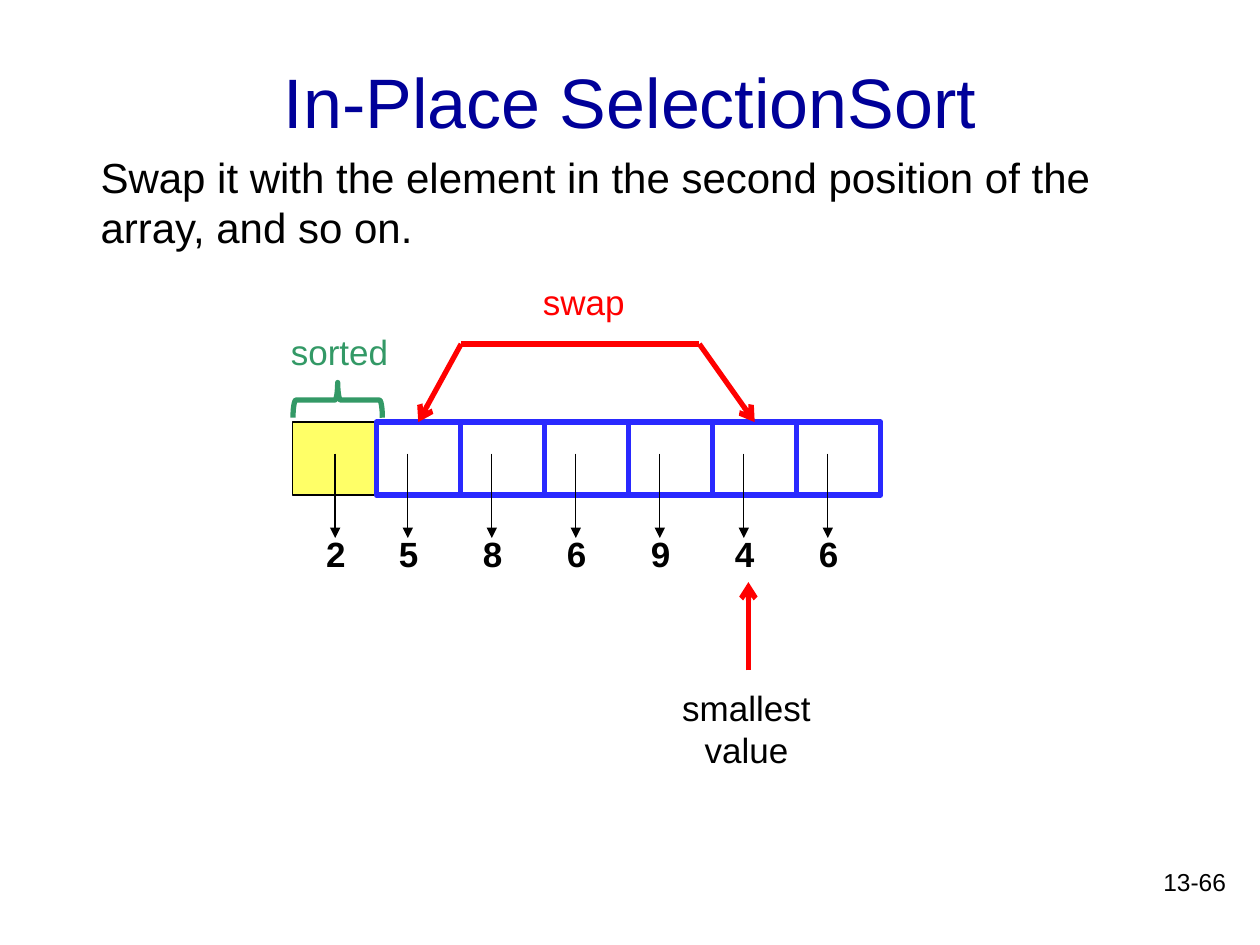
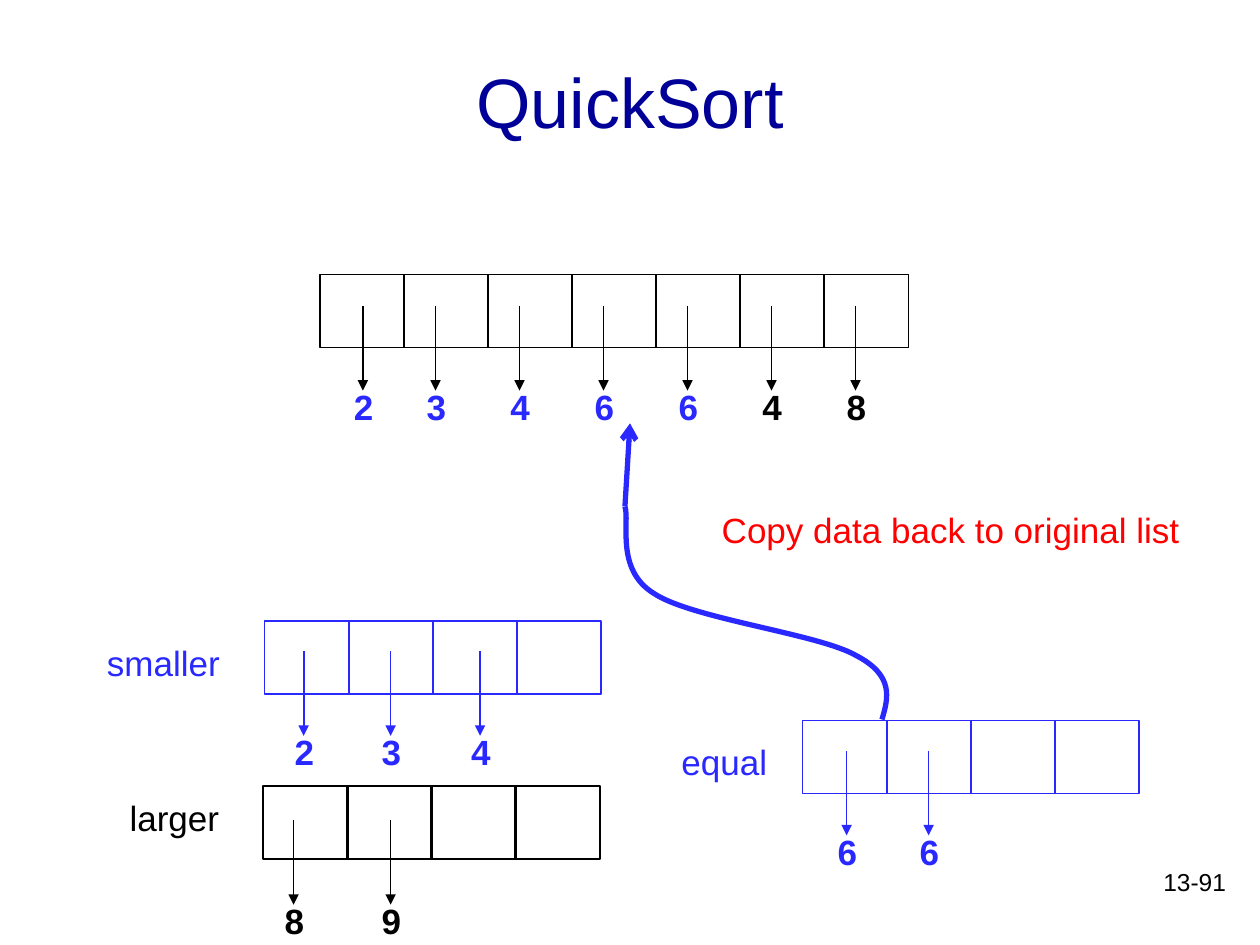
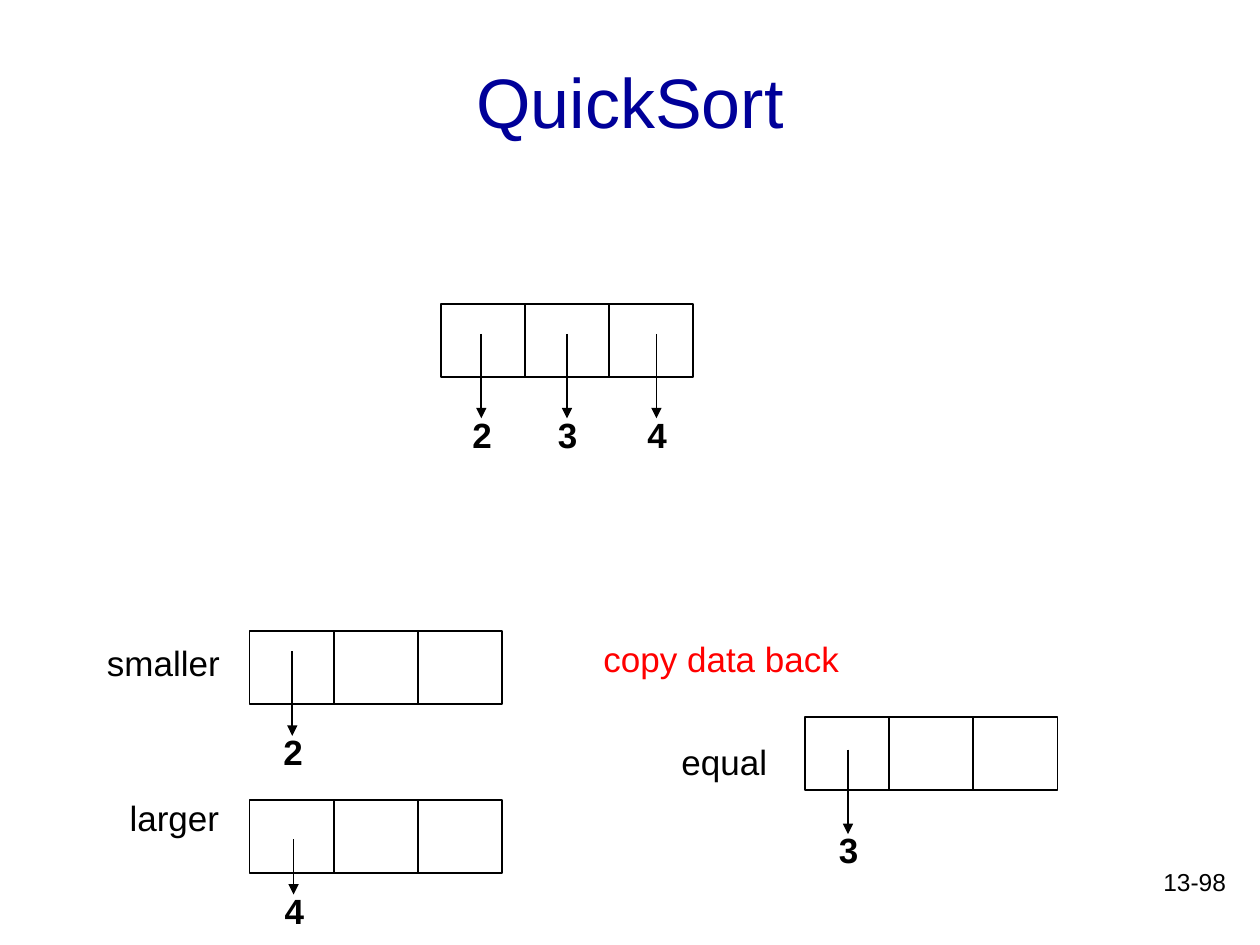
from lxml.etree import SubElement
from pptx import Presentation
from pptx.dml.color import RGBColor
from pptx.enum.shapes import MSO_CONNECTOR, MSO_SHAPE
from pptx.enum.text import MSO_ANCHOR, MSO_AUTO_SIZE, PP_ALIGN
from pptx.oxml.ns import qn
from pptx.util import Inches, Pt

COLORS = {
    "title": "000099",
    "ink": "000000",
    "active": "2929FF",
    "note": "FF0000",
    "sorted": "339966",
    "sorted_cell": "FFFF67",
}
FONT = "Arial"
CELL_PITCH = 2 / 3
CELL_WIDTH, CELL_HEIGHT = 0.67, 0.58
ARROW_LENGTH = 0.67


def rgb(color):
    return RGBColor.from_string(COLORS[color])


def add_text(slide, text, left, top, width, height, size=20, color="ink", bold=False,
             align=PP_ALIGN.LEFT, anchor=MSO_ANCHOR.TOP, wrap=True, before=0):
    box = slide.shapes.add_textbox(Inches(left), Inches(top), Inches(width), Inches(height))
    frame = box.text_frame
    frame.word_wrap = wrap
    frame.auto_size = MSO_AUTO_SIZE.NONE if wrap else MSO_AUTO_SIZE.SHAPE_TO_FIT_TEXT
    frame.vertical_anchor = anchor
    frame.text = text
    for paragraph in frame.paragraphs:
        paragraph.alignment = align
        paragraph.space_before = Pt(before)
        font = paragraph.font
        for run in paragraph.runs:
            font = run.font
            font.name, font.size, font.bold = FONT, Pt(size), bold
            font.color.rgb = rgb(color)


def add_label(slide, text, left, top, width, color="ink", height=0.44, **options):
    add_text(slide, text, left, top, width, height, color=color, wrap=False, **options)


def style_outline(shape, color, weight, fill=None):
    shape.shadow.inherit = False
    shape.line.color.rgb = rgb(color)
    shape.line.width = Pt(weight)
    if fill:
        shape.fill.solid()
        shape.fill.fore_color.rgb = rgb(fill)
    else:
        shape.fill.background()


def add_line(slide, start, end, color="ink", weight=1, head=None):
    line = slide.shapes.add_connector(
        MSO_CONNECTOR.STRAIGHT, *(Inches(value) for value in (*start, *end)))
    line.line.color.rgb = rgb(color)
    line.line.width = Pt(weight)
    if head:
        SubElement(line.line._get_or_add_ln(), qn("a:tailEnd"), type=head)
    SubElement(line._element.spPr, qn("a:effectLst"))


def add_cells(slide, left, top, count, color="ink", weight=1, fill=None):
    for index in range(count):
        cell = slide.shapes.add_shape(
            MSO_SHAPE.RECTANGLE, Inches(left + index * CELL_PITCH), Inches(top),
            Inches(CELL_WIDTH), Inches(CELL_HEIGHT))
        style_outline(cell, color, weight, fill)


def add_pointer(slide, value, x, top, color="ink", arrow_color="ink", weight=1,
                length=ARROW_LENGTH):
    """Arrow out of a cell, down to the value that the cell refers to."""
    end = top + length
    add_text(slide, value, x - 0.17, end - 0.09, 0.42, 0.43, color=color, bold=True, before=3)
    add_line(slide, (x, top), (x, end), arrow_color, weight, "triangle")


def add_full_list_pointers(slide, left, top, values, active_count=0):
    for index, value in enumerate(values):
        offset = 0.25 + index * CELL_PITCH if index else 0.34
        color = "active" if index < active_count else "ink"
        add_pointer(slide, value, left + offset, top, color, weight=0.75)


def add_curve(slide, points, color, weight):
    """Chain of cubic Bézier curves: a start, then two controls and an end for each."""
    start, *others = [(Inches(x), Inches(y)) for x, y in points]
    builder = slide.shapes.build_freeform(*start)
    builder.add_line_segments(others, close=False)
    curve = builder.convert_to_shape()
    style_outline(curve, color, weight)
    outline = next(curve._element.iter(qn("a:path")))
    segments = outline.findall(qn("a:lnTo"))
    for first in range(0, len(segments), 3):
        bezier = SubElement(outline, qn("a:cubicBezTo"))
        for segment in segments[first:first + 3]:
            bezier.append(segment[0])
            outline.remove(segment)


def add_group_labels(slide, color="ink"):
    add_label(slide, "larger", 0.93, 6.27, 0.92)
    add_label(slide, "smaller", 0.75, 5.04, 1.11, color)
    add_label(slide, "equal", 5.31, 5.83, 0.89, color)


def new_slide(deck, title, number):
    slide = deck.slides.add_slide(deck.slide_layouts[6])
    add_text(slide, number, 7.75, 6.83, 2.08, 0.5, size=14, align=PP_ALIGN.RIGHT)
    add_text(slide, title, 0.75, 0.17, 8.5, 1.25, size=40, color="title",
             align=PP_ALIGN.CENTER, anchor=MSO_ANCHOR.MIDDLE)
    return slide


def build_selection_sort(deck):
    slide = new_slide(deck, "In-Place SelectionSort", "13-66")
    left, top = 2.32, 3.35
    add_cells(slide, left, top, 1, weight=0.75, fill="sorted_cell")
    add_cells(slide, left + CELL_PITCH, top, 6, "active", 3)
    add_full_list_pointers(slide, left, top + 0.25, "2586946")

    brace = slide.shapes.add_shape(
        MSO_SHAPE.RIGHT_BRACE, Inches(2.54), Inches(2.82), Inches(0.28), Inches(0.71))
    brace.rotation = 270
    style_outline(brace, "sorted", 3)
    add_label(slide, "sorted", 2.21, 2.57, 0.98, "sorted")

    add_line(slide, (5.94, 5.32), (5.94, 4.62), "note", 3, "arrow")
    add_label(slide, "smallest\nvalue", 5.31, 5.4, 1.23, height=0.77, align=PP_ALIGN.CENTER)

    swap_left, swap_right = (3.66, 2.73), (5.55, 2.73)
    add_line(slide, swap_left, (3.32, top), "note", 3, "arrow")
    add_line(slide, swap_left, swap_right, "note", 3)
    add_line(slide, swap_right, (5.99, top), "note", 3, "arrow")
    add_label(slide, "swap", 4.21, 2.18, 0.86, "note")
    add_text(slide, "Swap it with the element in the second position of the array, and so on.",
             0.7, 1.15, 8.74, 0.91, size=24)


def build_copy_equal(deck):
    slide = new_slide(deck, "QuickSort", "13-91")
    add_cells(slide, 2.54, 2.18, 7, weight=0.75)
    add_full_list_pointers(slide, 2.54, 2.43, "2346648", active_count=5)

    add_cells(slide, 2.09, 6.24, 4)
    add_cells(slide, 2.1, 4.93, 4, "active")
    add_cells(slide, 6.37, 5.72, 4, "active", 0.75)
    add_group_labels(slide, "active")
    for value, x in (("2", 2.41), ("3", 3.1), ("4", 3.81)):
        add_pointer(slide, value, x, 5.17, "active", "active")
    for value, x in (("8", 2.33), ("9", 3.1)):
        add_pointer(slide, value, x, 6.51)
    for x in (6.72, 7.37):
        add_pointer(slide, "6", x, 5.96, "active", "active", 0.75)

    add_text(slide, "Copy data back to original list", 5.63, 3.99, 3.94, 0.44, color="note")
    curve_end = (4.96, 4.02)
    add_curve(slide, [(7, 5.71), (7.05, 5.54), (7.1, 5.36), (6.79, 5.2),
                      (6.49, 5.03), (5.49, 4.91), (5.19, 4.71),
                      (4.88, 4.52), (5, 4.14), curve_end], "active", 3)
    add_line(slide, curve_end, (5, 3.36), "active", 3, "arrow")


def build_copy_back(deck):
    slide = new_slide(deck, "QuickSort", "13-98")
    for left, top in ((3.5, 2.41), (1.98, 5.01), (1.98, 6.35), (6.39, 5.69)):
        add_cells(slide, left, top, 3)
    add_group_labels(slide)
    for value, x in (("2", 3.82), ("3", 4.5), ("4", 5.21)):
        add_pointer(slide, value, x, 2.65)
    add_pointer(slide, "3", 6.73, 5.95)
    add_pointer(slide, "2", 2.32, 5.17)
    add_pointer(slide, "4", 2.33, 6.66, length=0.44)
    add_label(slide, "copy data back", 4.69, 5.01, 2.09, "note")


def main():
    deck = Presentation()
    deck.slide_width, deck.slide_height = Inches(10), Inches(7.5)
    build_selection_sort(deck)
    build_copy_equal(deck)
    build_copy_back(deck)
    deck.save("out.pptx")


if __name__ == "__main__":
    main()
